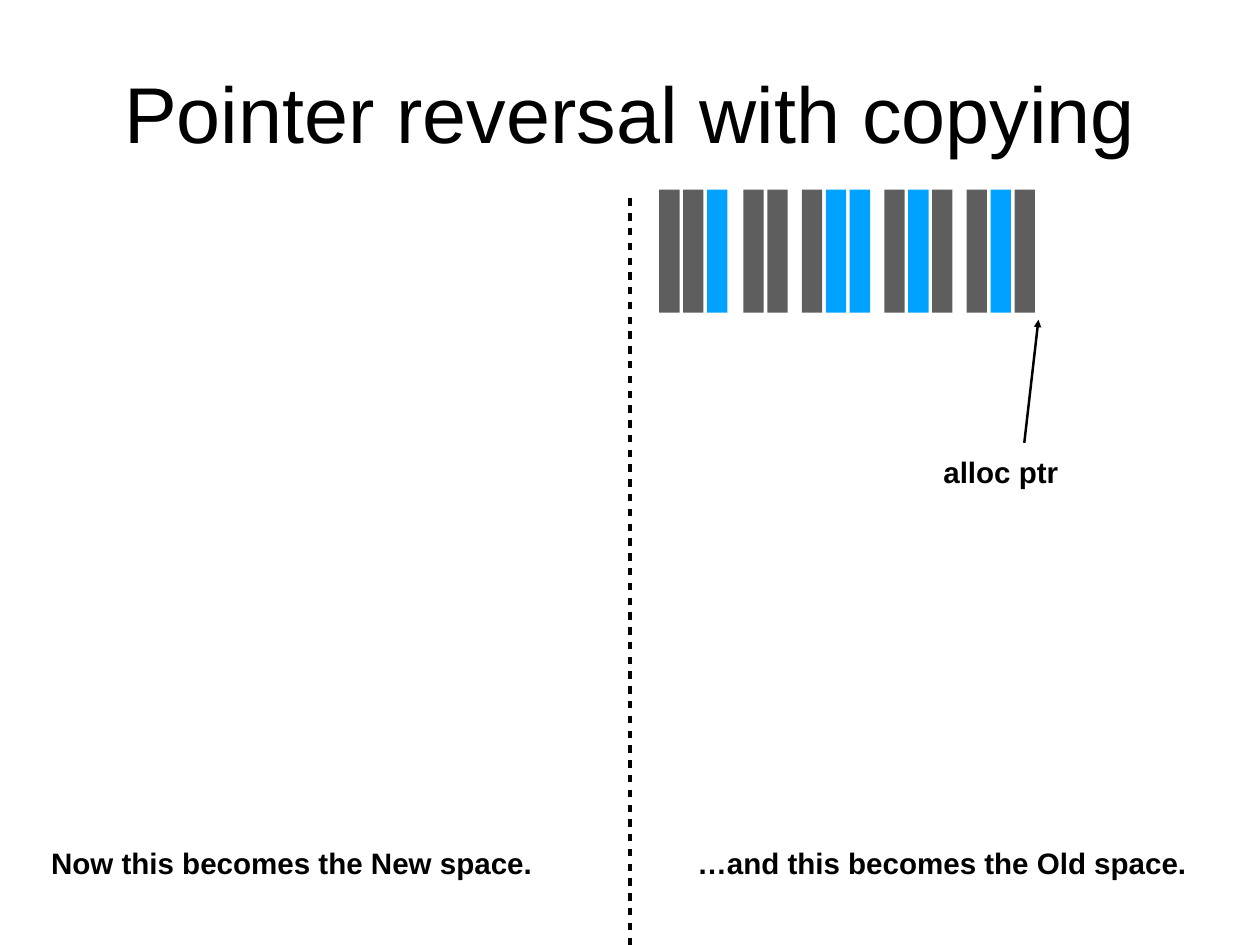
import pptx
import pptx.dml.color
import pptx.enum.shapes
import pptx.enum.text
import pptx.oxml
import pptx.oxml.ns
import pptx.util

Inches = pptx.util.Inches
Pt = pptx.util.Pt
RGBColor = pptx.dml.color.RGBColor

BLACK = RGBColor(0x00, 0x00, 0x00)
GRAY = RGBColor(0x5E, 0x5E, 0x5E)
BLUE = RGBColor(0x00, 0xA2, 0xFF)

FIELD_WIDTH, FIELD_HEIGHT, FIELD_PITCH = 0.23, 1.39, 0.27
HEAP_TOP = 2.14
HEAP_OBJECTS = [
    (7.44, (GRAY, GRAY, BLUE)),
    (8.39, (GRAY, GRAY)),
    (9.05, (GRAY, BLUE, BLUE)),
    (9.98, (GRAY, BLUE, GRAY)),
    (10.91, (GRAY, BLUE, GRAY)),
]
LABELS = [
    ("…and this becomes the Old space.", 7.8, 9.49, 5.66),
    ("Now this becomes the New space.", 0.48, 9.49, 5.62),
    ("alloc ptr", 10.58, 5.08, 1.43),
]
DASH = '<a:custDash %s><a:ds d="200000" sp="200000"/></a:custDash>'
ARROW = '<a:tailEnd %s type="triangle"/>'


class SlideBuilder:
    font = "Arial"
    margin = Inches(0.06)

    def __init__(self, slide):
        self.slide = slide

    def set_text(self, shape, text, size, bold, wrap, auto_size):
        frame = shape.text_frame
        frame.word_wrap = wrap
        frame.auto_size = auto_size
        frame.vertical_anchor = pptx.enum.text.MSO_ANCHOR.MIDDLE
        frame.margin_left = frame.margin_right = self.margin
        frame.margin_top = frame.margin_bottom = self.margin
        paragraph = frame.paragraphs[0]
        paragraph.alignment = pptx.enum.text.PP_ALIGN.CENTER
        run = paragraph.add_run()
        run.text = text
        run.font.name = self.font
        run.font.size = Pt(size)
        run.font.bold = bold
        run.font.color.rgb = BLACK

    def title(self, text, left, top, width, height):
        shape = self.slide.shapes.title
        shape.left, shape.top = Inches(left), Inches(top)
        shape.width, shape.height = Inches(width), Inches(height)
        self.set_text(shape, text, 64.3, False, True,
                      pptx.enum.text.MSO_AUTO_SIZE.NONE)

    def label(self, text, left, top, width):
        shape = self.slide.shapes.add_textbox(
            Inches(left), Inches(top), Inches(width), Inches(0.5))
        self.set_text(shape, text, 24, True, False,
                      pptx.enum.text.MSO_AUTO_SIZE.SHAPE_TO_FIT_TEXT)

    def field(self, left, color):
        shape = self.slide.shapes.add_shape(
            pptx.enum.shapes.MSO_SHAPE.RECTANGLE, Inches(left), Inches(HEAP_TOP),
            Inches(FIELD_WIDTH), Inches(FIELD_HEIGHT))
        shape.shadow.inherit = False
        shape.fill.solid()
        shape.fill.fore_color.rgb = color
        shape.line.fill.background()

    def line(self, start, end, width, decoration):
        connector = self.slide.shapes.add_connector(
            pptx.enum.shapes.MSO_CONNECTOR.STRAIGHT,
            *(Inches(value) for value in start + end))
        connector.line.color.rgb = BLACK
        connector.line.width = Pt(width)
        namespace = pptx.oxml.ns.nsdecls("a")
        connector.line._get_or_add_ln().append(
            pptx.oxml.parse_xml(decoration % namespace))
        connector._element.spPr.append(
            pptx.oxml.parse_xml("<a:effectLst %s/>" % namespace))


def main():
    presentation = pptx.Presentation()
    presentation.slide_width = Inches(14.22)
    presentation.slide_height = Inches(10.67)
    builder = SlideBuilder(
        presentation.slides.add_slide(presentation.slide_layouts[5]))

    builder.title("Pointer reversal with copying", 1.04, 0.28, 12.14, 1.96)
    builder.line((7.11, 10.67), (7.11, 2.16), 3, DASH)
    for left, colors in HEAP_OBJECTS:
        for index, color in enumerate(colors):
            builder.field(left + index * FIELD_PITCH, color)
    for label in LABELS:
        builder.label(*label)
    builder.line((11.56, 5), (11.72, 3.61), 2, ARROW)

    presentation.save("out.pptx")


if __name__ == "__main__":
    main()
